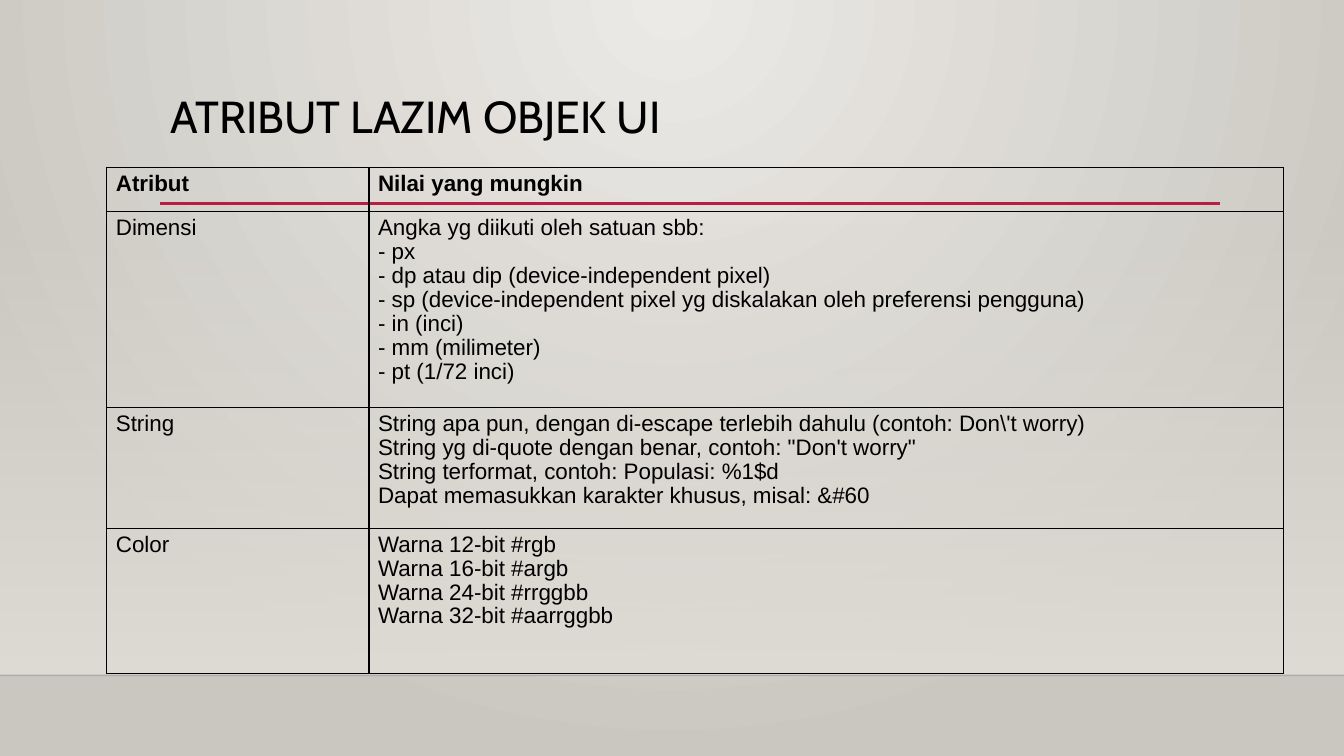
"""Builds the slide on common attributes of UI objects."""
from lxml import etree
from pptx import Presentation
from pptx.dml.color import RGBColor
from pptx.enum import shapes, text
from pptx.oxml import parse_xml
from pptx.oxml.ns import qn
from pptx.util import Inches, Pt

TITLE = "ATRIBUT LAZIM OBJEK UI"
ROWS = [
    ("Atribut", ["Nilai yang mungkin"]),
    ("Dimensi", [
        "Angka yg diikuti oleh satuan sbb:",
        "- px",
        "- dp atau dip (device-independent pixel)",
        "- sp (device-independent pixel yg diskalakan oleh preferensi pengguna)",
        "- in (inci)",
        "- mm (milimeter)",
        "- pt (1/72 inci)",
    ]),
    ("String", [
        "String apa pun, dengan di-escape terlebih dahulu (contoh: Don\\'t worry)",
        "String yg di-quote dengan benar, contoh: \"Don't worry\"",
        "String terformat, contoh: Populasi: %1$d",
        "Dapat memasukkan karakter khusus, misal: &#60",
    ]),
    ("Color", [
        "Warna 12-bit #rgb",
        "Warna 16-bit #argb",
        "Warna 24-bit #rrggbb",
        "Warna 32-bit #aarrggbb",
    ]),
]
WIDTH, HEIGHT = 13.33, 7.5
FLOOR, BAND_TOP, RULE_Y = 6.7, 2.21, 2.02
MARGIN, RULE_END = 1.59, 12.1
TABLE_LEFT, TABLE_TOP = 1.06, 1.66
COL_WIDTHS = [2.6, 9.07]
ROW_HEIGHTS = [0.44, 1.94, 1.2, 1.44]

BLACK = RGBColor(0, 0, 0)
EDGE = RGBColor(0, 0, 1)
CRIMSON = RGBColor(0xB7, 0x1E, 0x42)
LIGHT = RGBColor(0xEC, 0xEA, 0xE7)
DARK = RGBColor(0xCA, 0xC7, 0xC1)
SAND = RGBColor(0xDF, 0xDB, 0xD5)
NS = 'xmlns:a="http://schemas.openxmlformats.org/drawingml/2006/main"'


def set_gradient(fill, colors):
    fill.gradient()
    for stop, color, position in zip(fill.gradient_stops, colors, (0, 1)):
        stop.color.rgb = color
        stop.position = position


def set_alpha(element, percent):
    color = next(element.iter(qn("a:srgbClr")))
    etree.SubElement(color, qn("a:alpha")).set("val", str(percent * 1000))


def add_rule(slide, left, right, y, color, weight):
    line = slide.shapes.add_connector(
        shapes.MSO_CONNECTOR.STRAIGHT,
        Inches(left), Inches(y), Inches(right), Inches(y))
    line.line.color.rgb = color
    line.line.width = Pt(weight)
    etree.SubElement(line._element.spPr, qn("a:effectLst"))
    return line


def write(tf, lines, font, size, spacing, bold=False):
    for i, content in enumerate(lines):
        p = tf.paragraphs[0] if i == 0 else tf.add_paragraph()
        p.text = content
        p.line_spacing = spacing
        p.font.name, p.font.size, p.font.bold = font, Pt(size), bold
        p.font.color.rgb = BLACK


def add_background(slide):
    fill = slide.background.fill
    set_gradient(fill, (LIGHT, DARK))
    lin = next(slide._element.iter(qn("a:lin")))
    lin.getparent().replace(lin, parse_xml(
        f'<a:path {NS} path="circle"><a:fillToRect l="43000" t="0" '
        'r="43000" b="100000"/></a:path>'))
    band = slide.shapes.add_shape(
        shapes.MSO_SHAPE.RECTANGLE, 0, Inches(BAND_TOP),
        Inches(WIDTH), Inches(FLOOR - BAND_TOP))
    band.shadow.inherit = False
    band.line.fill.background()
    set_gradient(band.fill, (SAND, SAND))
    band.fill.gradient_angle = 270
    set_alpha(band._element.spPr, 0)
    floor = add_rule(slide, 0, WIDTH, FLOOR, EDGE, 1)
    set_alpha(floor._element.spPr, 20)
    add_rule(slide, MARGIN, RULE_END, RULE_Y, CRIMSON, 2.5)


def add_title(slide):
    box = slide.shapes.add_textbox(
        Inches(MARGIN), Inches(0.89), Inches(10.5), Inches(1.15))
    tf = box.text_frame
    tf.word_wrap = True
    tf.vertical_anchor = text.MSO_ANCHOR.TOP
    write(tf, [TITLE], "Cabin", 32, 0.9)


def add_borders(cell):
    tcPr = cell._tc.get_or_add_tcPr()
    for i, side in enumerate(("lnL", "lnR", "lnT", "lnB")):
        tcPr.insert(i, parse_xml(
            f'<a:{side} {NS} w="12700"><a:solidFill><a:srgbClr val="{BLACK}"/>'
            f'</a:solidFill></a:{side}>'))


def add_attributes(slide):
    table = slide.shapes.add_table(
        len(ROWS), len(COL_WIDTHS), Inches(TABLE_LEFT), Inches(TABLE_TOP),
        Inches(sum(COL_WIDTHS)), Inches(sum(ROW_HEIGHTS))).table
    table.first_row = table.horz_banding = False
    for column, width in zip(table.columns, COL_WIDTHS):
        column.width = Inches(width)
    for r, (name, values) in enumerate(ROWS):
        table.rows[r].height = Inches(ROW_HEIGHTS[r])
        for c, lines in enumerate(([name], values)):
            cell = table.cell(r, c)
            cell.margin_left = cell.margin_right = Inches(0.09)
            cell.margin_top = cell.margin_bottom = Inches(0.05)
            cell.fill.background()
            add_borders(cell)
            write(cell.text_frame, lines, "Arial", 16, 0.96, r == 0)


def main():
    prs = Presentation()
    prs.slide_width, prs.slide_height = Inches(WIDTH), Inches(HEIGHT)
    slide = prs.slides.add_slide(prs.slide_layouts[6])
    add_background(slide)
    add_title(slide)
    add_attributes(slide)
    prs.save("out.pptx")


if __name__ == "__main__":
    main()
